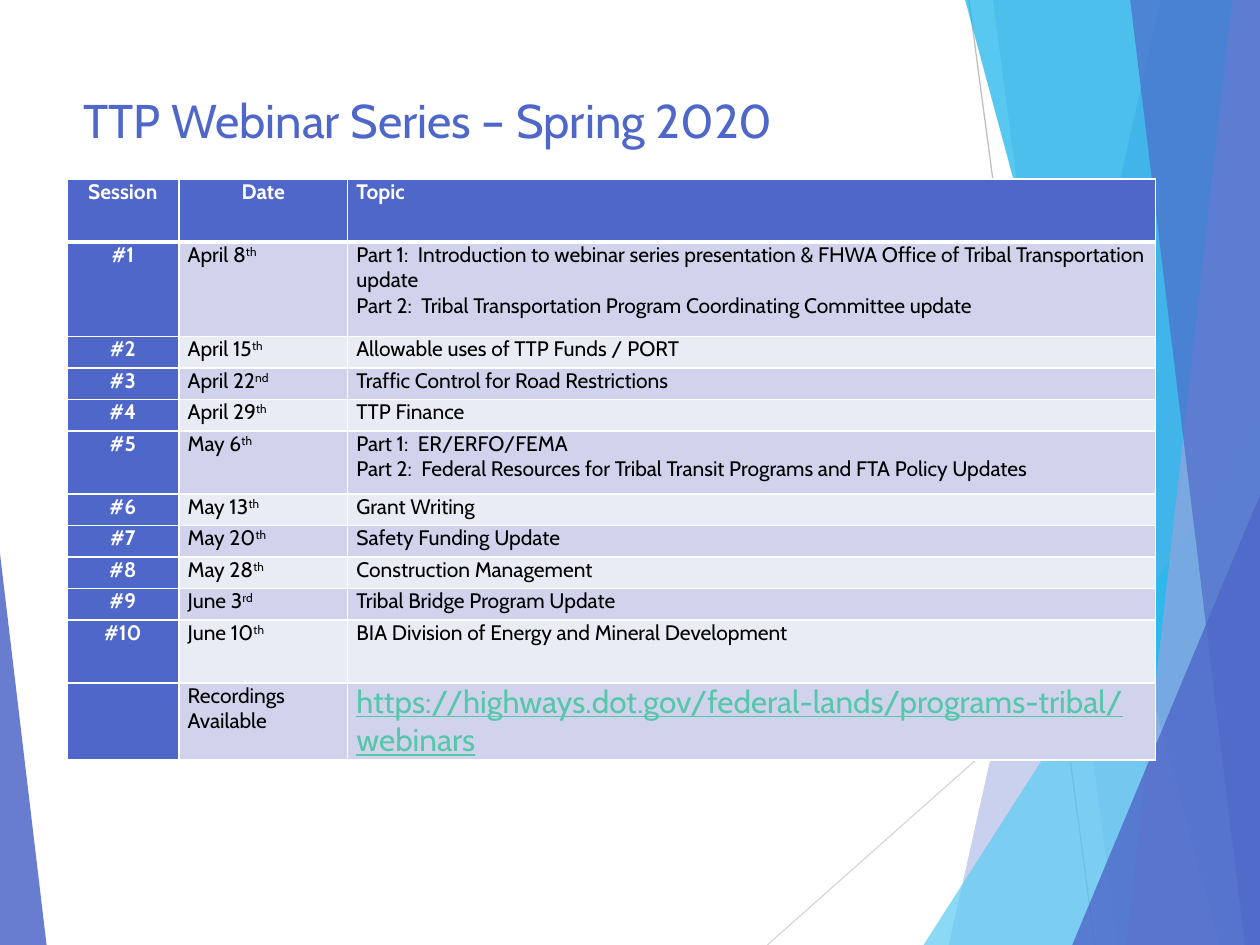
from lxml import etree
from pptx import Presentation
from pptx import util as u
from pptx.dml.color import RGBColor
from pptx.enum import shapes, text
from pptx.oxml.ns import qn

COLORS = {
    "blue": "4E67C8", "pale_blue": "95A4DE", "sky": "5ECCF3", "cyan": "12B2EB",
    "band_dark": "D0D3EB", "band_light": "E9EBF5", "link": "56C7AA",
    "white": "FFFFFF", "black": "000000", "gray": "BFBFBF", "light_gray": "D9D9D9",
}
FONT = "Cabin"
WIDTH, HEIGHT = 10, 7.5
TITLE = "TTP Webinar Series – Spring 2020"
HEADERS = ["Session", "Date", "Topic"]
SESSIONS = [
    ("April 8", "th", ["Part 1:  Introduction to webinar series presentation & FHWA Office of Tribal Transportation update",
                       "Part 2:  Tribal Transportation Program Coordinating Committee update"]),
    ("April 15", "th", ["Allowable uses of TTP Funds / PORT"]),
    ("April 22", "nd", ["Traffic Control for Road Restrictions"]),
    ("April 29", "th", ["TTP Finance"]),
    ("May 6", "th", ["Part 1:  ER/ERFO/FEMA",
                     "Part 2:  Federal Resources for Tribal Transit Programs and FTA Policy Updates"]),
    ("May 13", "th", ["Grant Writing"]),
    ("May 20", "th", ["Safety Funding Update"]),
    ("May 28", "th", ["Construction Management"]),
    ("June 3", "rd", ["Tribal Bridge Program Update"]),
    ("June 10", "th", ["BIA Division of Energy and Mineral Development"]),
]
RECORDINGS = ("Recordings Available", "https://highways.dot.gov/federal-lands/programs-tribal/webinars")
COL_WIDTHS = [0.89, 1.34, 6.41]
ROW_HEIGHTS = [0.5, 0.75, 0.25, 0.25, 0.25, 0.5, 0.25, 0.25, 0.25, 0.25, 0.5, 0.5]

LINES = [((7.69, 0), (8.69, 7.5), "gray"), ((10, 4.03), (6.09, 7.5), "light_gray")]
RIBBONS = [
    ("panel", (9.21, 7.53), "blue", 30),
    ("panel", (7.88, 8.87), "blue", 20),
    ("triangle", (7.33, 3.33, 2.67, 4.17, 1), "sky", 72),
    ("panel", (7.66, 9.68), "cyan", 70),
    ("panel", (9.78, 8.94), "pale_blue", 70),
    ("panel", (8.97, 9.88), "blue", 65),
    ("triangle", (8.51, 3.93, 1.49, 3.57, 1), "blue", 80),
    ("triangle", (0, 4.39, 0.37, 3.11, 0), "blue", 85),
]


def rgb(name):
    return RGBColor.from_string(COLORS[name])


def apply(obj, formats):
    for name, value in formats.items():
        setattr(obj, name, value)


def add_line(s, start, end, color):
    c = s.shapes.add_connector(shapes.MSO_CONNECTOR.STRAIGHT, *map(u.Inches, start + end))
    c.line.color.rgb = rgb(color)
    c.line.width = u.Pt(0.75)
    etree.SubElement(c._element.spPr, qn("a:effectLst"))


def add_ribbon(s, kind, geometry, color, opacity):
    if kind == "panel":
        top, bottom = geometry
        corners = [(top, 0), (WIDTH, 0), (WIDTH, HEIGHT), (bottom, HEIGHT)]
        points = [(u.Inches(x), u.Inches(y)) for x, y in corners]
        builder = s.shapes.build_freeform(*points[0])
        builder.add_line_segments(points[1:], close=True)
        sp = builder.convert_to_shape()
    else:
        *box, apex = geometry
        sp = s.shapes.add_shape(shapes.MSO_SHAPE.ISOSCELES_TRIANGLE, *map(u.Inches, box))
        sp.adjustments[0] = apex
    sp.shadow.inherit = False
    sp.fill.solid()
    sp.fill.fore_color.rgb = rgb(color)
    tint = sp._element.spPr.find(".//" + qn("a:srgbClr"))
    etree.SubElement(tint, qn("a:alpha"), val=str(opacity * 1000))
    sp.line.fill.background()


def add_run(p, words, color, size=12, bold=False, underline=False, raised=False):
    r = p.add_run()
    r.text = words
    apply(r.font, {"name": FONT, "size": u.Pt(size), "bold": bold, "underline": underline})
    r.font.color.rgb = rgb(color)
    if raised:
        r._r.get_or_add_rPr().set("baseline", "30000")


def style_cell(cell, fill, top, bottom):
    apply(cell, {"margin_left": u.Inches(0.07), "margin_right": u.Inches(0.07),
                 "margin_top": 0, "margin_bottom": 0})
    tc_pr = cell._tc.get_or_add_tcPr()
    for side, points in (("L", 1), ("R", 1), ("T", top), ("B", bottom)):
        ln = etree.SubElement(tc_pr, qn("a:ln" + side), w=str(u.Pt(points)))
        solid = etree.SubElement(ln, qn("a:solidFill"))
        etree.SubElement(solid, qn("a:srgbClr"), val=COLORS["white"])
    cell.fill.solid()
    cell.fill.fore_color.rgb = rgb(fill)


def table_rows():
    label = {"color": "white", "bold": True}
    body = {"color": "black"}
    yield [[[(h, label)]] for h in HEADERS]
    for number, (date, suffix, topics) in enumerate(SESSIONS, 1):
        yield [[[(f"#{number}", label)]],
               [[(date, body), (suffix, {**body, "raised": True})]],
               [[(topic, body)] for topic in topics]]
    note, link = RECORDINGS
    yield [[], [[(note, body)]], [[(link, {"color": "link", "size": 18, "underline": True})]]]


def add_schedule(s):
    frame = s.shapes.add_table(len(ROW_HEIGHTS), len(COL_WIDTHS), u.Inches(0.53), u.Inches(1.42),
                               u.Inches(sum(COL_WIDTHS)), u.Inches(sum(ROW_HEIGHTS)))
    table = frame.table
    for column, width in zip(table.columns, COL_WIDTHS):
        column.width = u.Inches(width)
    for row, height in zip(table.rows, ROW_HEIGHTS):
        row.height = u.Inches(height)
    for i, row in enumerate(table_rows()):
        band = "band_dark" if i % 2 else "band_light"
        for j, paragraphs in enumerate(row):
            cell = table.cell(i, j)
            style_cell(cell, "blue" if i == 0 or j == 0 else band,
                       3 if i == 1 else 1, 3 if i == 0 else 1)
            tf = cell.text_frame
            centered = j == 0 or (i == 0 and j == 1)
            for k, runs in enumerate(paragraphs):
                p = tf.add_paragraph() if k else tf.paragraphs[0]
                p.alignment = text.PP_ALIGN.CENTER if centered else text.PP_ALIGN.LEFT
                for words, formats in runs:
                    add_run(p, words, **formats)


def add_title(s):
    title = s.shapes.title
    s.shapes._spTree.append(title._element)
    apply(title, {"left": u.Inches(0.56), "top": u.Inches(0.67),
                  "width": u.Inches(7.05), "height": u.Inches(1.44)})
    tf = title.text_frame
    apply(tf, {"word_wrap": True, "vertical_anchor": text.MSO_ANCHOR.TOP,
               "auto_size": text.MSO_AUTO_SIZE.NONE})
    p = tf.paragraphs[0]
    p.alignment = text.PP_ALIGN.LEFT
    add_run(p, TITLE, "blue", size=27)


def main():
    prs = Presentation()
    prs.slide_width, prs.slide_height = u.Inches(WIDTH), u.Inches(HEIGHT)
    s = prs.slides.add_slide(prs.slide_layouts[5])
    for line in LINES:
        add_line(s, *line)
    for ribbon in RIBBONS:
        add_ribbon(s, *ribbon)
    add_title(s)
    add_schedule(s)
    prs.save("out.pptx")


if __name__ == "__main__":
    main()
